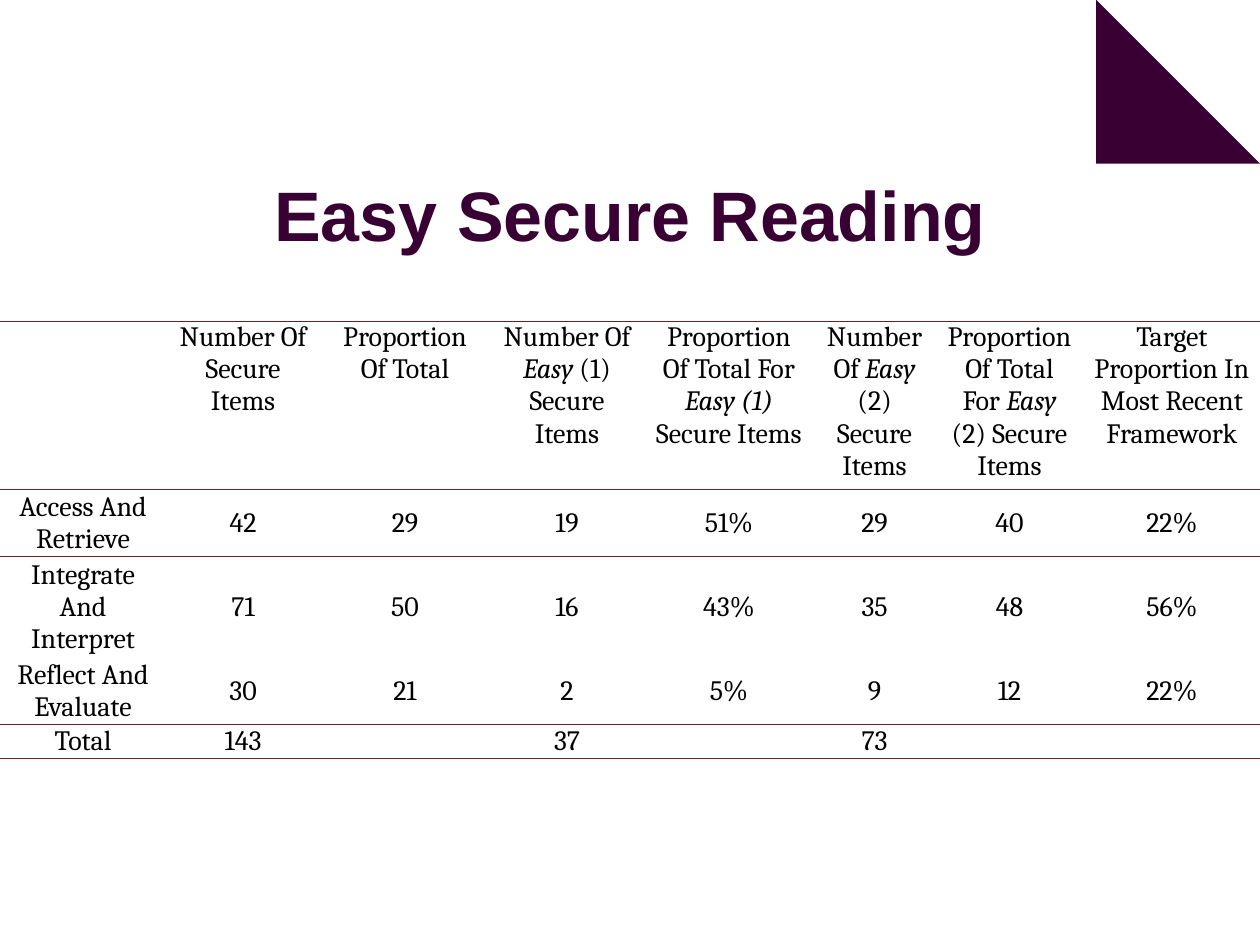
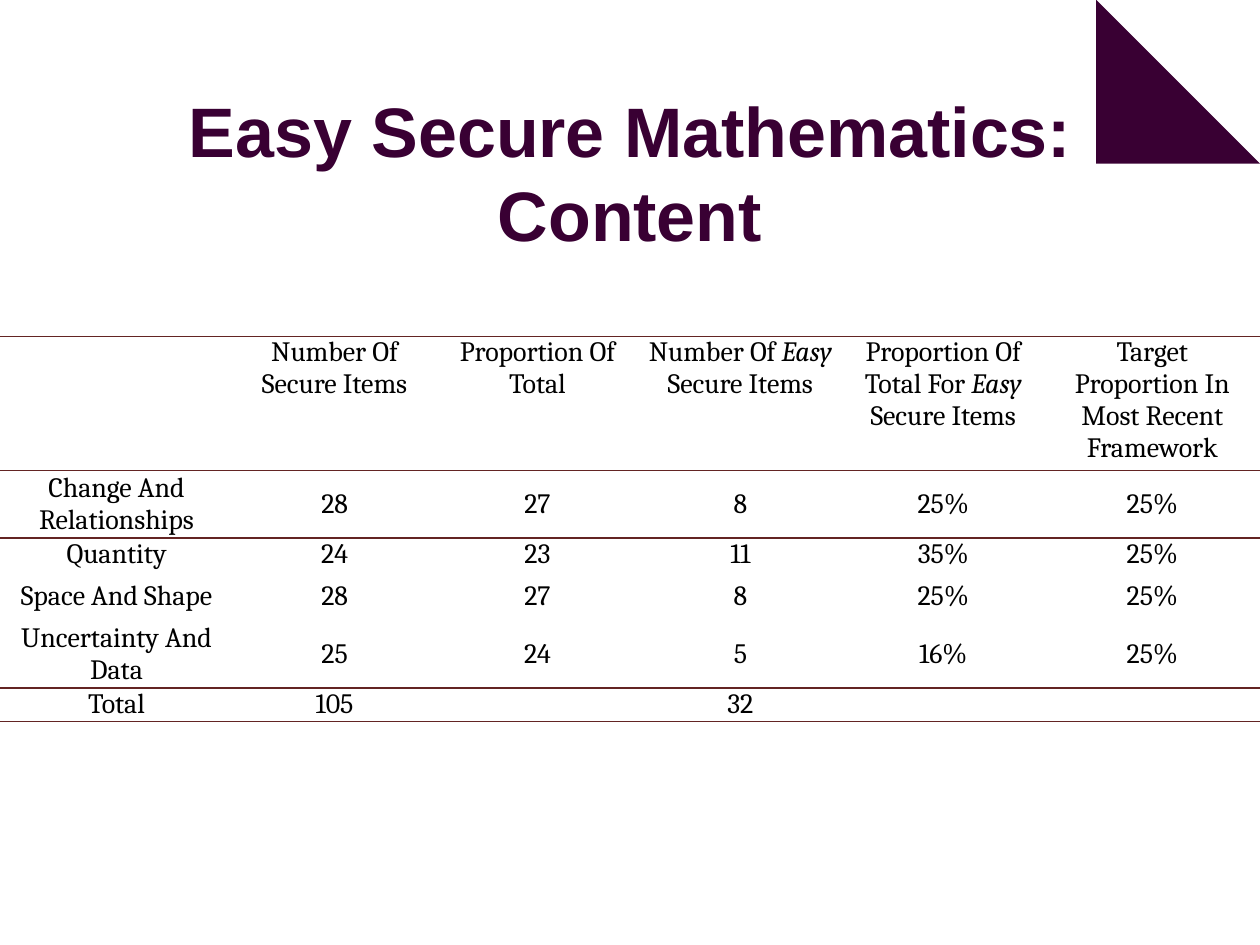
from lxml.etree import SubElement
from pptx import Presentation
from pptx.dml.color import RGBColor
from pptx.enum.shapes import MSO_SHAPE
from pptx.enum.text import MSO_ANCHOR, PP_ALIGN
from pptx.oxml.ns import qn
from pptx.util import Cm, Pt

SLIDE_WIDTH, SLIDE_HEIGHT = 25.4, 19.05
PLUM, MAROON, BLACK = "390033", "632423", "000000"
NO_STYLE_NO_GRID = "{2D5ABB26-0587-4C30-8999-92F81FD0307C}"
BODY_SIZE = 16


def color(hex_string):
    return RGBColor.from_string(hex_string)


TITLE_FONT = {"name": "Arial", "size": Pt(40), "bold": True}
BODY_FONT = {"name": "Cambria", "size": Pt(BODY_SIZE)}
CELL_FORMAT = {"margin_left": Cm(0.18), "margin_right": Cm(0.18),
               "margin_top": 0, "margin_bottom": 0}

# Boxes are left, top, width, height in centimetres
CORNER_BOX = (22.1, 0, 3.3, 3.3)
TITLE_BOX = (1.9, 2.11, 21.6, 3.17)

# Asterisks enclose italic words
READING = {
    "title": "Easy Secure Reading",
    "top": 6.48,
    "columns": [3.35, 3.1, 3.43, 3.1, 3.43, 2.44, 3, 3.55],
    "rows": [3.25, 1.3, 1.95, 1.3, 0.65],
    "cells": [
        ["", "Number Of Secure Items", "Proportion Of Total",
         "Number Of *Easy* (1) Secure Items",
         "Proportion Of Total For *Easy (1)* Secure Items",
         "Number Of *Easy* (2) Secure Items",
         "Proportion Of Total For *Easy* (2) Secure Items",
         "Target Proportion In Most Recent Framework"],
        ["Access And Retrieve", "42", "29", "19", "51%", "29", "40", "22%"],
        ["Integrate And Interpret", "71", "50", "16", "43%", "35", "48", "56%"],
        ["Reflect And Evaluate", "30", "21", "2", "5%", "9", "12", "22%"],
        ["Total", "143", "", "37", "", "73", "", ""],
    ],
}
MATHEMATICS = {
    "title": "Easy Secure Mathematics: Content",
    "top": 6.78,
    "columns": [4.7] + [4.09] * 4 + [4.34],
    "rows": [2.58, 1.3, 0.65, 0.99, 1.3, 0.65],
    "cells": [
        ["", "Number Of Secure Items", "Proportion Of Total",
         "Number Of *Easy* Secure Items",
         "Proportion Of Total For *Easy* Secure Items",
         "Target Proportion In Most Recent Framework"],
        ["Change And Relationships", "28", "27", "8", "25%", "25%"],
        ["Quantity", "24", "23", "11", "35%", "25%"],
        ["Space And Shape", "28", "27", "8", "25%", "25%"],
        ["Uncertainty And Data", "25", "24", "5", "16%", "25%"],
        ["Total", "105", "", "32", "", ""],
    ],
}


def apply_format(target, values):
    for name, value in values.items():
        setattr(target, name, value)


def write_text(paragraph, text, font_format, font_color):
    """Write centred text, with the parts between asterisks in italics."""
    paragraph.alignment = PP_ALIGN.CENTER
    for index, part in enumerate(text.split("*")):
        if part:
            run = paragraph.add_run()
            run.text = part
            apply_format(run.font, font_format)
            run.font.color.rgb = color(font_color)
            if index % 2:
                run.font.italic = True


def add_corner(slide, box):
    shape = slide.shapes.add_shape(MSO_SHAPE.RIGHT_TRIANGLE, *map(Cm, box))
    shape.shadow.inherit = False
    shape.fill.solid()
    shape.fill.fore_color.rgb = color(PLUM)
    shape.line.fill.background()


def add_title(slide, box, text):
    text_frame = slide.shapes.add_textbox(*map(Cm, box)).text_frame
    apply_format(text_frame, {"word_wrap": True,
                              "vertical_anchor": MSO_ANCHOR.BOTTOM})
    write_text(text_frame.paragraphs[0], text, TITLE_FONT, PLUM)


def add_border(cell, edge):
    line = SubElement(cell._tc.get_or_add_tcPr(), qn(f"a:{edge}"), w=str(Pt(1)))
    fill = SubElement(line, qn("a:solidFill"))
    SubElement(fill, qn("a:srgbClr"), val=MAROON)


def fill_cell(cell, text, is_header, edges):
    apply_format(cell, CELL_FORMAT)
    cell.vertical_anchor = MSO_ANCHOR.TOP if is_header else MSO_ANCHOR.MIDDLE
    for edge in edges:
        add_border(cell, edge)
    cell.fill.background()
    paragraph = cell.text_frame.paragraphs[0]
    write_text(paragraph, text, BODY_FONT, BLACK)
    if not text:
        # An empty cell keeps the body size so that its row stays low
        SubElement(paragraph._p, qn("a:endParaRPr"), sz=str(BODY_SIZE * 100))


def add_item_table(slide, box, columns, rows, cells):
    table = slide.shapes.add_table(len(rows), len(columns), *map(Cm, box)).table
    apply_format(table, {"first_row": False, "horz_banding": False})
    table._tbl.tblPr.find(qn("a:tableStyleId")).text = NO_STYLE_NO_GRID
    for column, width in zip(table.columns, columns):
        column.width = Cm(width)
    for row, height in zip(table.rows, rows):
        row.height = Cm(height)

    # Rules frame the header row and the total row
    last = len(rows) - 1
    for row_index, texts in enumerate(cells):
        edges = ["lnT"] if row_index in (0, 1, last) else []
        if row_index in (0, last - 1, last):
            edges.append("lnB")
        for column_index, text in enumerate(texts):
            fill_cell(table.cell(row_index, column_index), text,
                      row_index == 0, edges)


def add_table_slide(presentation, content):
    slide = presentation.slides.add_slide(presentation.slide_layouts[6])
    add_corner(slide, CORNER_BOX)
    add_title(slide, TITLE_BOX, content["title"])
    table_box = (0, content["top"], SLIDE_WIDTH, sum(content["rows"]))
    add_item_table(slide, table_box, content["columns"], content["rows"],
                   content["cells"])


def main():
    presentation = Presentation()
    presentation.slide_width = Cm(SLIDE_WIDTH)
    presentation.slide_height = Cm(SLIDE_HEIGHT)
    for content in (READING, MATHEMATICS):
        add_table_slide(presentation, content)
    presentation.save("out.pptx")


if __name__ == "__main__":
    main()
